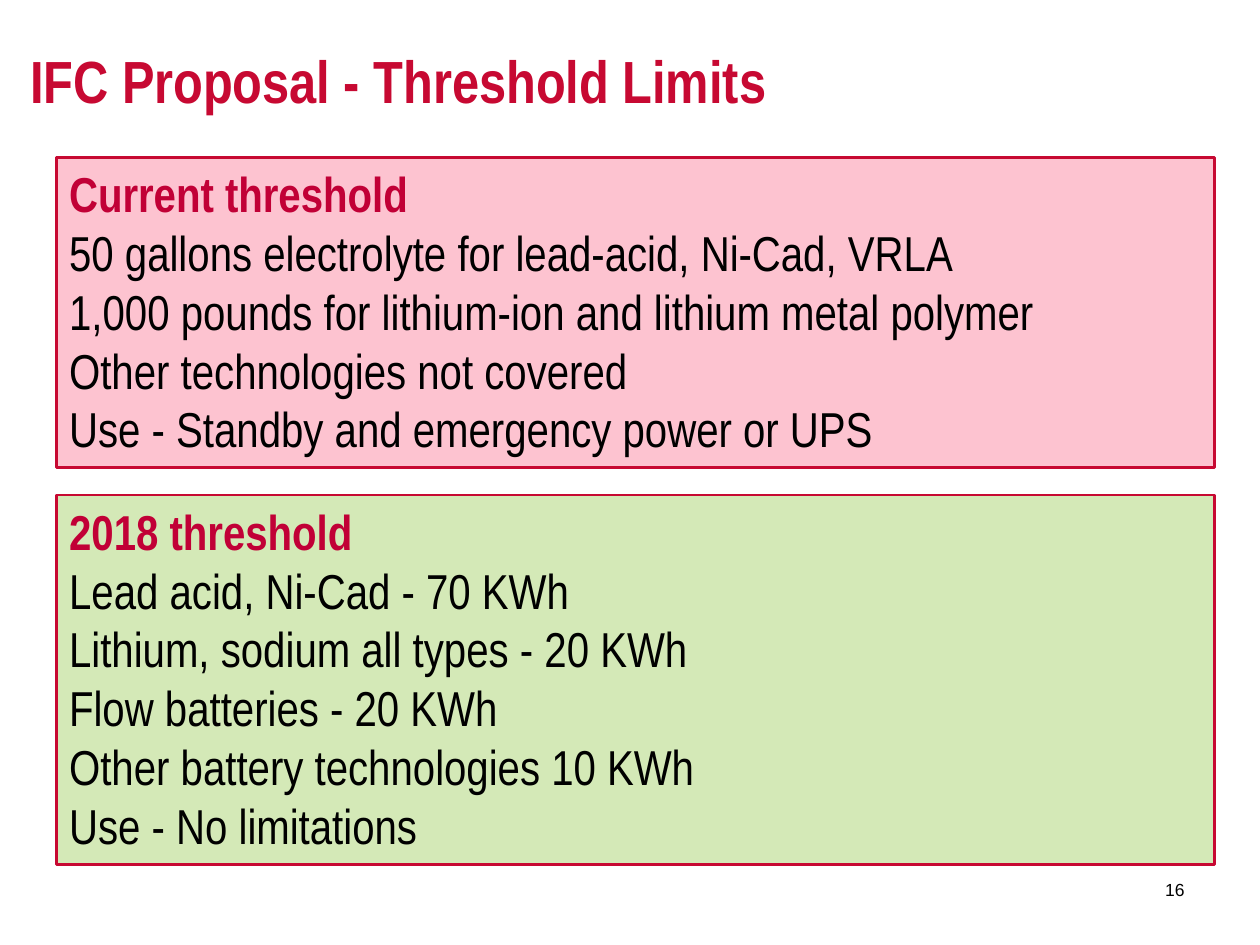
import pptx
import pptx.dml.color
import pptx.enum.shapes
import pptx.enum.text
import pptx.util

Inches = pptx.util.Inches
Align = pptx.enum.text.PP_ALIGN
Anchor = pptx.enum.text.MSO_ANCHOR


def color(value):
    return pptx.dml.color.RGBColor.from_string(value)


class ThresholdSlide:
    """Holds the style and the current page, and draws each kind of element."""

    crimson = "C70932"
    heading = "C10036"
    black = "000000"
    narrow = "Arial Narrow"

    def __init__(self, page):
        self.page = page

    def style_runs(self, para, size, hue, font, bold=False):
        for span in para.runs:
            span.font.size = pptx.util.Pt(size)
            span.font.name = font
            span.font.bold = bold
            span.font.color.rgb = color(hue)

    def label(self, text, place, size, hue, font, bold=False,
              align=Align.LEFT, anchor=Anchor.TOP):
        box = self.page.shapes.add_textbox(*map(Inches, place))
        frame = box.text_frame
        frame.word_wrap = True
        frame.vertical_anchor = anchor
        frame.text = text
        para = frame.paragraphs[0]
        para.alignment = align
        self.style_runs(para, size, hue, font, bold)

    def panel(self, lines, top, height, fill):
        place = map(Inches, (0.45, top, 9.19, height))
        box = self.page.shapes.add_shape(
            pptx.enum.shapes.MSO_SHAPE.RECTANGLE, *place)
        box.shadow.inherit = False
        box.fill.solid()
        box.fill.fore_color.rgb = color(fill)
        box.line.color.rgb = color(self.crimson)
        box.line.width = pptx.util.Pt(1.5)
        frame = box.text_frame
        frame.word_wrap = True
        frame.vertical_anchor = Anchor.TOP
        frame.auto_size = pptx.enum.text.MSO_AUTO_SIZE.SHAPE_TO_FIT_TEXT
        frame.text = "\n".join(lines)
        for index, para in enumerate(frame.paragraphs):
            first = index == 0
            para.alignment = Align.LEFT
            self.style_runs(para, 28, self.heading if first else self.black,
                            self.narrow, first)


def main():
    deck = pptx.Presentation()
    deck.slide_width = Inches(10)
    deck.slide_height = Inches(7.5)
    slide = ThresholdSlide(deck.slides.add_slide(deck.slide_layouts[6]))
    slide.label("IFC Proposal - Threshold Limits", (0.14, 0.3, 9.65, 1.25),
                34, slide.crimson, slide.narrow, bold=True)
    slide.label("16", (8.8, 6.86, 0.7, 0.4), 10, slide.black, "Arial",
                align=Align.RIGHT, anchor=Anchor.MIDDLE)
    slide.panel([
        "Current threshold",
        "50 gallons electrolyte for lead-acid, Ni-Cad, VRLA",
        "1,000 pounds for lithium-ion and lithium metal polymer",
        "Other technologies not covered",
        "Use - Standby and emergency power or UPS",
    ], 1.25, 2.46, "FDC3D0")
    slide.panel([
        "2018 threshold",
        "Lead acid, Ni-Cad - 70 KWh",
        "Lithium, sodium all types - 20 KWh",
        "Flow batteries - 20 KWh",
        "Other battery technologies 10 KWh",
        "Use - No limitations",
    ], 3.93, 2.93, "D4E9B7")
    deck.save("out.pptx")


if __name__ == "__main__":
    main()
